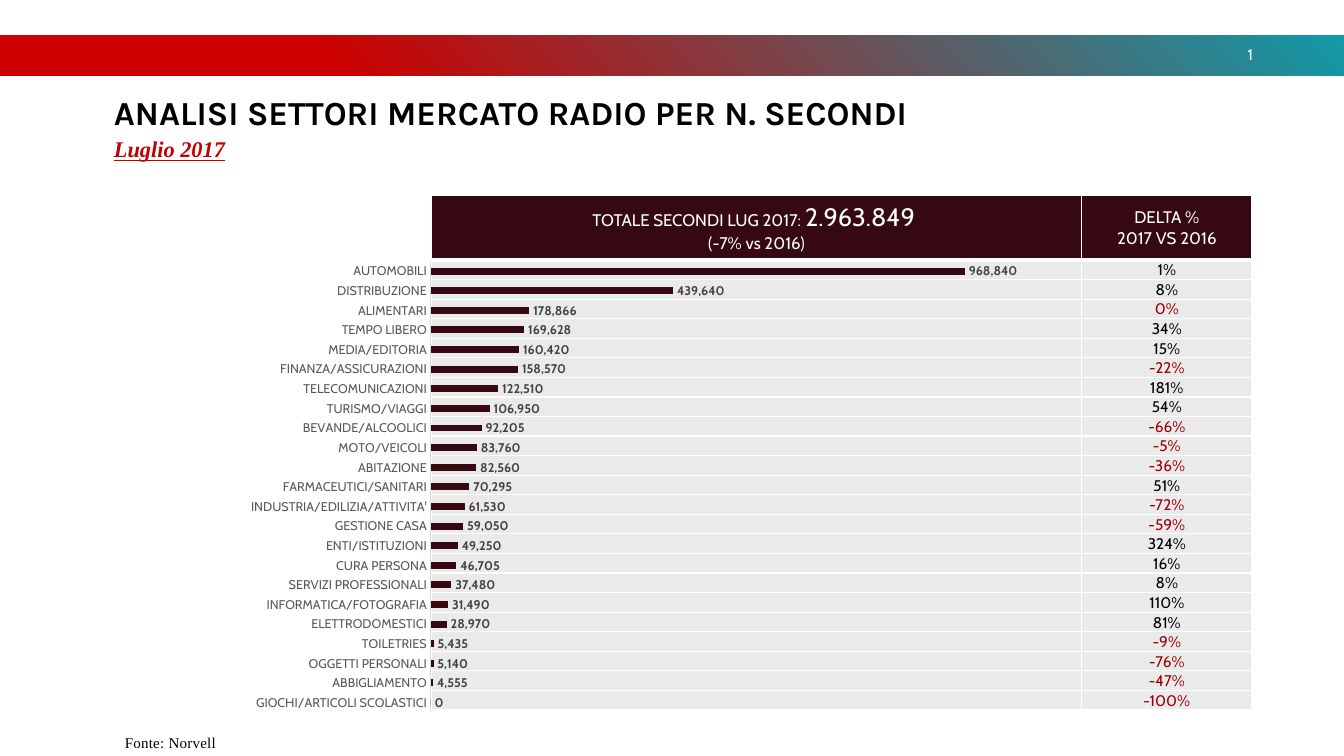
from lxml.etree import SubElement
from pptx import Presentation
from pptx.chart.data import CategoryChartData
from pptx.dml.color import RGBColor
from pptx.enum.chart import XL_CHART_TYPE as CT, XL_LABEL_POSITION as LP, XL_TICK_MARK as TM
from pptx.enum.shapes import MSO_SHAPE as SHAPE
from pptx.enum.text import MSO_ANCHOR as ANCHOR, PP_ALIGN as ALIGN
from pptx.oxml import parse_xml
from pptx.oxml.ns import nsdecls, qn
from pptx.util import Pt

SECTORS = [
    ("AUTOMOBILI", 968840, 1), ("DISTRIBUZIONE", 439640, 8),
    ("ALIMENTARI", 178866, 0), ("TEMPO LIBERO", 169628, 34),
    ("MEDIA/EDITORIA", 160420, 15), ("FINANZA/ASSICURAZIONI", 158570, -22),
    ("TELECOMUNICAZIONI", 122510, 181), ("TURISMO/VIAGGI", 106950, 54),
    ("BEVANDE/ALCOOLICI", 92205, -66), ("MOTO/VEICOLI", 83760, -5),
    ("ABITAZIONE", 82560, -36), ("FARMACEUTICI/SANITARI", 70295, 51),
    ("INDUSTRIA/EDILIZIA/ATTIVITA'", 61530, -72), ("GESTIONE CASA", 59050, -59),
    ("ENTI/ISTITUZIONI", 49250, 324), ("CURA PERSONA", 46705, 16),
    ("SERVIZI PROFESSIONALI", 37480, 8), ("INFORMATICA/FOTOGRAFIA", 31490, 110),
    ("ELETTRODOMESTICI", 28970, 81), ("TOILETRIES", 5435, -9),
    ("OGGETTI PERSONALI", 5140, -76), ("ABBIGLIAMENTO", 4555, -47),
    ("GIOCHI/ARTICOLI SCOLASTICI", 0, -100),
]


def rgb(value):
    return RGBColor.from_string(value)


def set_font(font, size, color, name="Cabin", bold=False, italic=False, underline=False):
    font.name, font.size, font.color.rgb = name, Pt(size), rgb(color)
    font.bold, font.italic, font.underline = bold, italic, underline


def write(p, text, size, color, align=ALIGN.LEFT, before=0, line=None, spacing=None, **style):
    """Add one formatted run to a paragraph."""
    p.alignment, p.space_before = align, Pt(before)
    if line:
        p.line_spacing = line
    r = p.add_run()
    r.text = text
    set_font(r.font, size, color, **style)
    if spacing:
        r.font._element.set("spc", str(spacing))


class Deck:
    DARK, PALE, WHITE, BLACK, NEGATIVE = "360812", "EAEAEA", "FFFFFF", "000000", "9C0006"

    def __init__(self, width, height):
        self.prs = Presentation()
        self.prs.slide_width, self.prs.slide_height = Pt(width), Pt(height)
        self.s = self.prs.slides.add_slide(self.prs.slide_layouts[6])

    def band(self, x, y, w, h, start, end):
        sp = self.s.shapes.add_shape(SHAPE.RECTANGLE, Pt(x), Pt(y), Pt(w), Pt(h))
        sp.shadow.inherit = False
        sp.line.fill.background()
        sp.fill.gradient()
        for stop, color, pos in zip(sp.fill.gradient_stops, (start, end), (0.25, 1)):
            stop.color.rgb, stop.position = rgb(color), pos
        # Radial gradient from the bottom left corner
        lin = sp._element.spPr.find(".//" + qn("a:lin"))
        lin.getparent().replace(lin, parse_xml(
            f'<a:path {nsdecls("a")} path="circle"><a:fillToRect t="100000" r="100000"/></a:path>'))

    def text(self, x, y, w, h, anchor=ANCHOR.TOP, inset=(7.2, 3.6)):
        tf = self.s.shapes.add_textbox(Pt(x), Pt(y), Pt(w), Pt(h)).text_frame
        tf.word_wrap, tf.vertical_anchor = True, anchor
        tf.margin_left = tf.margin_right = Pt(inset[0])
        tf.margin_top = tf.margin_bottom = Pt(inset[1])
        return tf

    def table(self, x, y, widths, heights):
        shape = self.s.shapes.add_table(
            len(heights), len(widths), Pt(x), Pt(y), Pt(sum(widths)), Pt(sum(heights)))
        t = shape.table
        t.first_row = t.horz_banding = False
        for col, w in zip(t.columns, widths):
            col.width = Pt(w)
        for row, h in zip(t.rows, heights):
            row.height = Pt(h)
        return t

    def cell(self, cell, fill, anchor, inset, bottom=1):
        cell.vertical_anchor = anchor
        cell.margin_left = cell.margin_right = Pt(inset[0])
        cell.margin_top, cell.margin_bottom = Pt(inset[1]), Pt(inset[2])
        tcPr = cell._tc.get_or_add_tcPr()
        for side, width in (("L", 1), ("R", 1), ("T", 1), ("B", bottom)):
            ln = SubElement(tcPr, qn(f"a:ln{side}"), w=str(Pt(width)))
            SubElement(SubElement(ln, qn("a:solidFill")), qn("a:srgbClr"), val=self.WHITE)
        cell.fill.solid()
        cell.fill.fore_color.rgb = rgb(fill)
        return cell.text_frame

    def bars(self, x, y, w, h, names, values, plot, top):
        data = CategoryChartData(number_format="#,##0")
        data.categories = names
        data.add_series("Series 1", values)
        chart = self.s.shapes.add_chart(
            CT.BAR_CLUSTERED, Pt(x), Pt(y), Pt(w), Pt(h), data).chart
        chart.has_legend = chart.has_title = False
        set_font(chart.font, 10, self.BLACK, name="Calibri")
        # Axes
        cat, val = chart.category_axis, chart.value_axis
        cat.reverse_order = True
        cat.major_tick_mark = cat.minor_tick_mark = TM.NONE
        set_font(cat.tick_labels.font, 9, "595959")
        cat.format.line.color.rgb, cat.format.line.width = rgb("D9D9D9"), Pt(0.75)
        val.visible = val.has_major_gridlines = False
        val.minimum_scale, val.maximum_scale = 0, top
        # Bars and labels
        bar = chart.plots[0]
        bar.gap_width, bar.vary_by_categories = 182, False
        fill = bar.series[0].format.fill
        fill.solid()
        fill.fore_color.rgb = rgb(self.DARK)
        bar.has_data_labels = True
        labels = bar.data_labels
        labels.show_value, labels.position = True, LP.OUTSIDE_END
        labels.number_format, labels.number_format_is_linked = "#,##0", False
        set_font(labels.font, 9, "404040", bold=True)
        # Fixed inner plot area
        area = chart._chartSpace.chart.plotArea
        for old in area.findall(qn("c:layout")):
            area.remove(old)
        items = [("layoutTarget", "inner"), ("xMode", "edge"), ("yMode", "edge"),
                 *zip("xywh", plot)]
        inner = "".join(f'<c:{tag} val="{v}"/>' for tag, v in items)
        area.insert(0, parse_xml(
            f'<c:layout {nsdecls("c")}><c:manualLayout>{inner}</c:manualLayout></c:layout>'))


def main():
    d = Deck(960, 540)

    # Top band and source line
    d.band(0, 25.2, 960, 28.8, "CC0000", "119AA8")
    tf = d.text(82.1, 519.8, 105.8, 20.2, ANCHOR.BOTTOM)
    write(tf.paragraphs[0], "Fonte: Norvell", 10.7, d.BLACK, before=3, spacing=20,
          name="Times New Roman")

    # Table header
    t = d.table(308.2, 139.7, (464.4, 121.7), [46] + [14] * len(SECTORS))
    total, delta = (d.cell(c, d.DARK, ANCHOR.MIDDLE, (9.4, 5, 5), bottom=3)
                    for c in t.rows[0].cells)
    head = dict(color=d.WHITE, align=ALIGN.CENTER)
    write(total.paragraphs[0], "TOTALE SECONDI LUG 2017: ", 12, **head)
    write(total.paragraphs[0], "2.963.849 ", 18, **head)
    write(total.add_paragraph(), "(-7% vs 2016)", 12, **head)
    write(delta.paragraphs[0], "DELTA %", 12, **head)
    write(delta.add_paragraph(), "2017 VS 2016", 12, **head)

    # Table body
    for i, (_, _, change) in enumerate(SECTORS, 1):
        empty, tf = (d.cell(c, d.PALE, ANCHOR.BOTTOM, (0.7, 0.7, 0)) for c in t.rows[i].cells)
        SubElement(empty.paragraphs[0]._p, qn("a:endParaRPr"), sz="800")
        write(tf.paragraphs[0], f"{change}%", 11, d.BLACK if change > 0 else d.NEGATIVE,
              align=ALIGN.CENTER)

    # Page number and titles
    tf = d.text(734.4, 28.8, 167.8, 21.6)
    write(tf.paragraphs[0], "1", 11, d.WHITE, align=ALIGN.RIGHT)
    tf = d.text(81.4, 69.1, 664.6, 48.2, inset=(0, 0))
    write(tf.paragraphs[0], "ANALISI SETTORI MERCATO RADIO PER N. SECONDI", 24, d.BLACK,
          line=0.9, name="Karla", bold=True)
    write(tf.add_paragraph(), "Luglio 2017", 16, "C00000", before=4, line=0.9,
          name="Times New Roman", bold=True, italic=True, underline=True)

    # Seconds by sector
    names, seconds, _ = zip(*SECTORS)
    d.bars(174.2, 175.7, 617.8, 344.2, names, seconds, (0.216, 0.032, 0.765, 0.936), 1200000)

    d.prs.save("out.pptx")


if __name__ == "__main__":
    main()
